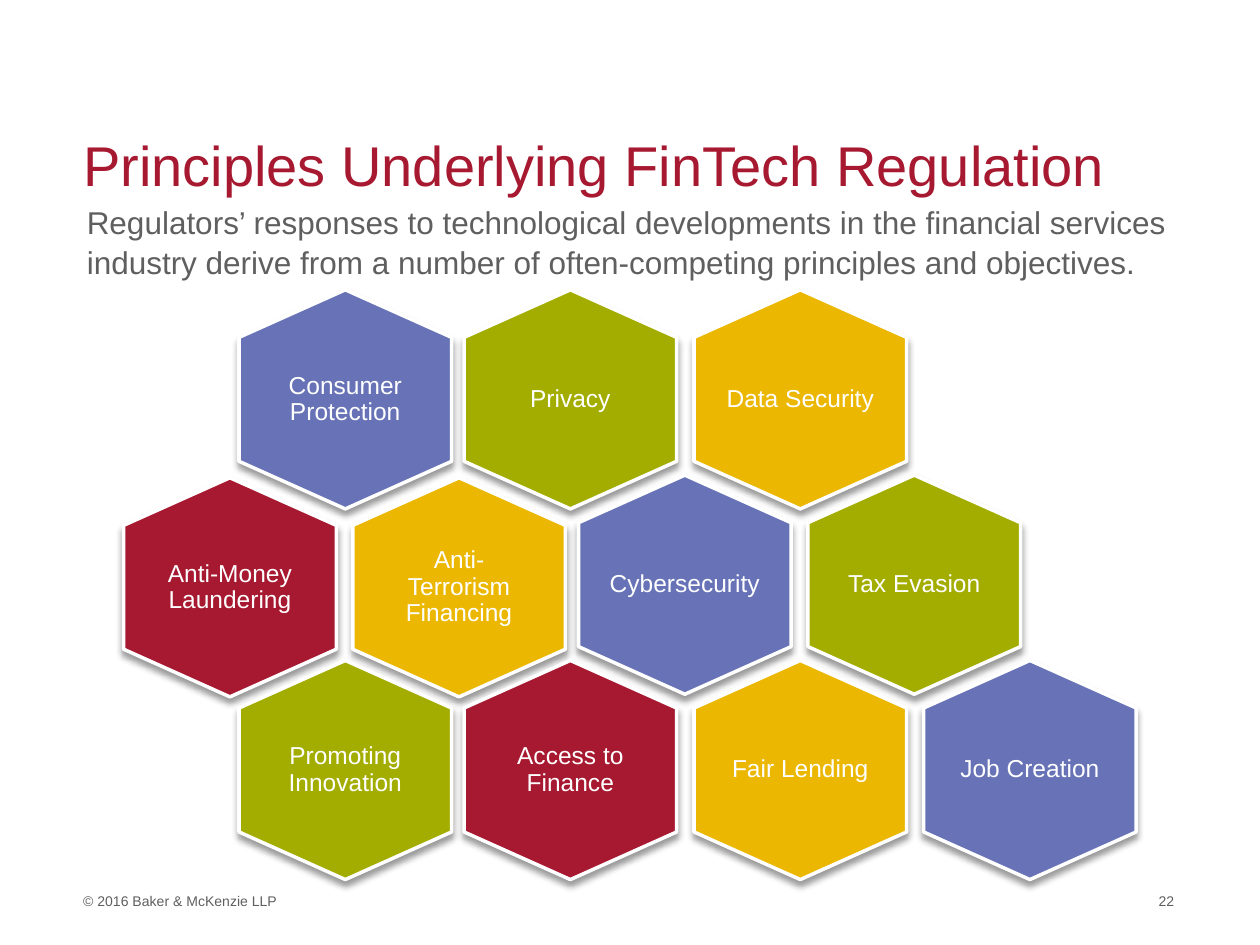
from pptx import Presentation
from pptx.dml.color import RGBColor
from pptx.enum.text import MSO_ANCHOR, MSO_AUTO_SIZE, PP_ALIGN
from pptx.oxml import parse_xml
from pptx.oxml.ns import nsdecls
from pptx.util import Pt

RED = RGBColor(0xA7, 0x19, 0x30)
GREEN = RGBColor(0xA3, 0xAD, 0x00)
GOLD = RGBColor(0xEB, 0xB7, 0x00)
BLUE = RGBColor(0x67, 0x73, 0xB6)
GREY = RGBColor(0x5F, 0x5F, 0x5F)
WHITE = RGBColor(0xFF, 0xFF, 0xFF)

HEX_W, HEX_H, SHOULDER = 121.5, 125.2, 27.2
OUTER_COLUMNS = (136.6, 265.2, 396.6, 527.8)
MIDDLE_COLUMNS = (70.7, 201.6, 330.6, 461.7)
TOP, ROW_PITCH = 165.6, 105.9
MIDDLE_DROP = 1.5  # the two left cells of the middle row sit slightly lower
LABEL_INSET, NARROW_INSET = 15.8, 24.5

ROWS = (
    (OUTER_COLUMNS, (("Consumer Protection", BLUE), ("Privacy", GREEN),
                     ("Data Security", GOLD))),
    (MIDDLE_COLUMNS, (("Anti-Money Laundering", RED),
                      ("Anti-Terrorism Financing", GOLD),
                      ("Cybersecurity", BLUE), ("Tax Evasion", GREEN))),
    (OUTER_COLUMNS, (("Promoting Innovation", GREEN),
                     ("Access to Finance", RED),
                     ("Fair Lending", GOLD), ("Job Creation", BLUE))),
)

SHADOW = (
    f'<a:effectLst {nsdecls("a")}><a:outerShdw blurRad="50800" dist="38100" '
    'dir="5400000" rotWithShape="0"><a:srgbClr val="000000">'
    '<a:alpha val="40000"/></a:srgbClr></a:outerShdw></a:effectLst>'
)


def write(tf, text, size, color, insets=(0, 0, 0, 0), frame=None, para=None):
    """Fill a text frame with one paragraph; insets run left, top, right, bottom."""
    sides = ("margin_left", "margin_top", "margin_right", "margin_bottom")
    margins = {side: Pt(v) for side, v in zip(sides, insets)}
    p = tf.paragraphs[0]
    r = p.add_run()
    r.text = text
    formats = (
        (tf, {"word_wrap": True, "auto_size": MSO_AUTO_SIZE.NONE,
              "vertical_anchor": MSO_ANCHOR.TOP, **margins, **(frame or {})}),
        (p, {"alignment": PP_ALIGN.LEFT, **(para or {})}),
        (r.font, {"name": "Arial", "size": Pt(size)}),
    )
    for target, values in formats:
        for name, value in values.items():
            setattr(target, name, value)
    r.font.color.rgb = color


def add_text(slide, box, text, size, **formats):
    s = slide.shapes.add_textbox(*map(Pt, box))
    write(s.text_frame, text, size, GREY, **formats)


def set_title(slide, box, text):
    title = slide.shapes.title
    title.left, title.top, title.width, title.height = map(Pt, box)
    write(title.text_frame, text, 32, RED, insets=(0, 3, 0, 0))


def add_hexagon(slide, box, label, color, inset):
    x, y, w, h = box
    corners = ((x + w / 2, y), (x + w, y + SHOULDER),
               (x + w, y + h - SHOULDER), (x + w / 2, y + h),
               (x, y + h - SHOULDER), (x, y + SHOULDER))
    points = [(Pt(px), Pt(py)) for px, py in corners]
    builder = slide.shapes.build_freeform(*points[0])
    builder.add_line_segments(points[1:], close=True)
    s = builder.convert_to_shape()
    s.fill.solid()
    s.fill.fore_color.rgb = color
    s.line.color.rgb = WHITE
    s.line.width = Pt(2)
    s.element.spPr.append(parse_xml(SHADOW))
    write(s.text_frame, label, 14, WHITE, insets=(inset, 18.7, inset, 18.7),
          frame={"vertical_anchor": MSO_ANCHOR.MIDDLE},
          para={"alignment": PP_ALIGN.CENTER, "line_spacing": 0.9})


def add_honeycomb(slide, top):
    for row, (columns, cells) in enumerate(ROWS):
        for col, (x, (label, color)) in enumerate(zip(columns, cells)):
            drop = MIDDLE_DROP if row == 1 and col < 2 else 0
            box = (x, top + row * ROW_PITCH + drop, HEX_W, HEX_H)
            inset = NARROW_INSET if label.startswith("Anti") else LABEL_INSET
            add_hexagon(slide, box, label, color, inset)


def add_footer(slide, left, top, width):
    number_w = 53.3
    add_text(slide, (left, top, width - number_w, 9.4),
             "© 2016 Baker & McKenzie LLP", 8)
    add_text(slide, (left + width - number_w, top, number_w, 14.4), "22", 8,
             para={"alignment": PP_ALIGN.RIGHT})


def main():
    prs = Presentation()
    prs.slide_width, prs.slide_height = Pt(720), Pt(540)
    slide = prs.slides.add_slide(prs.slide_layouts[5])
    set_title(slide, (47.5, 71.3, 623.5, 38.9),
              "Principles Underlying FinTech Regulation")
    add_text(slide, (42.5, 111.6, 663.1, 51.1),
             "Regulators’ responses to technological developments in the "
             "financial services industry derive from a number of "
             "often-competing principles and objectives.", 18,
             insets=(7.2, 3.6, 7.2, 3.6), para={"line_spacing": 1.05})
    add_honeycomb(slide, TOP)
    add_footer(slide, 47.5, 509.8, 623.5)
    prs.save("out.pptx")


if __name__ == "__main__":
    main()
